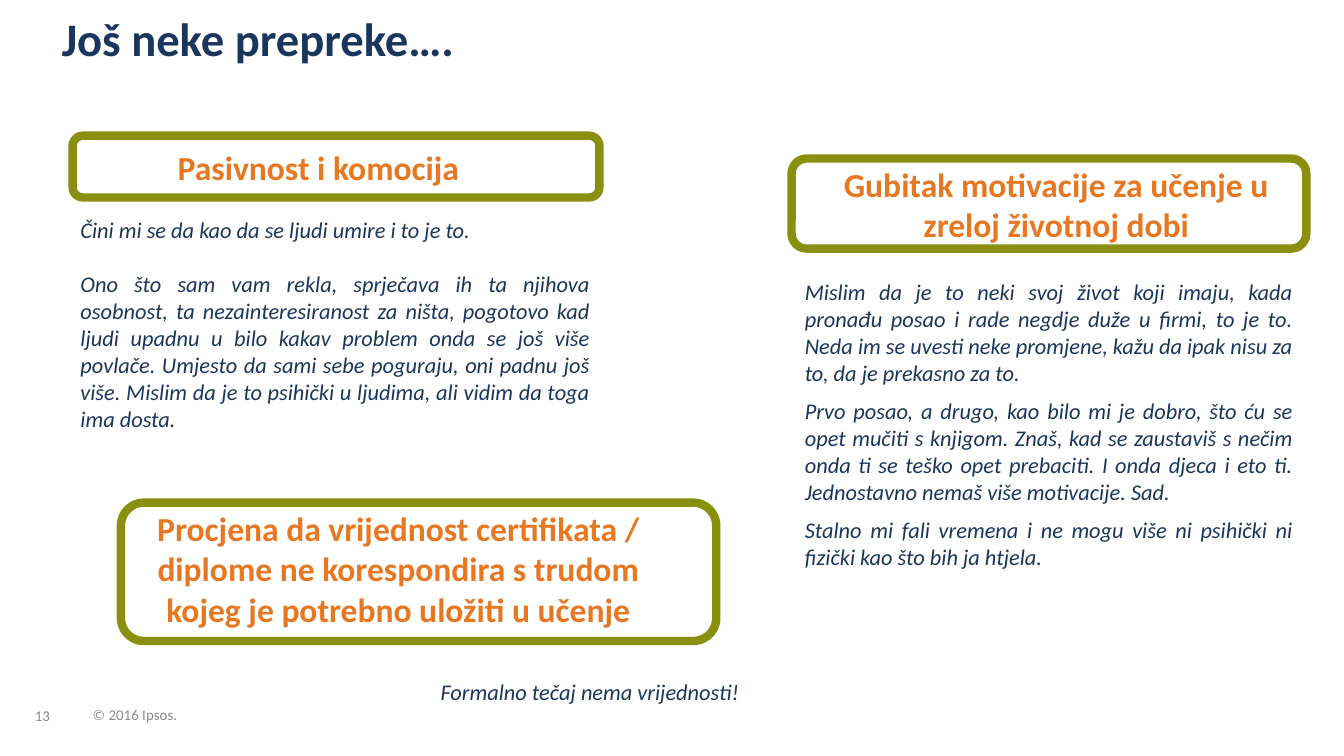
from pptx import Presentation
from pptx.dml.color import RGBColor
from pptx.enum.shapes import MSO_SHAPE
from pptx.enum.text import MSO_ANCHOR, MSO_AUTO_SIZE, PP_ALIGN
from pptx.util import Inches, Pt

NAVY, ORANGE, OLIVE, GREY = "1B365D", "E87722", "898F0E", "888B8D"


def color(value):
    return RGBColor.from_string(value)


def write(box, place, paragraphs, size, ink, align=PP_ALIGN.LEFT, inset=(0, 0),
          anchor=MSO_ANCHOR.TOP, wrap=True, gap=0, spacing=1.0, bold=False, italic=False):
    box.left, box.top, box.width, box.height = [Inches(value) for value in place]
    frame = box.text_frame
    side, edge = [Inches(value) for value in inset]
    frame_format = {"margin_left": side, "margin_right": side,
                    "margin_top": edge, "margin_bottom": edge,
                    "vertical_anchor": anchor, "word_wrap": wrap,
                    "auto_size": MSO_AUTO_SIZE.NONE}
    for name, value in frame_format.items():
        setattr(frame, name, value)
    for index, text in enumerate(paragraphs):
        para = frame.paragraphs[0] if index == 0 else frame.add_paragraph()
        para.alignment = align
        para.line_spacing = spacing
        para.space_before = Pt(gap if index else 0)
        span = para.add_run()
        span.text = text
        font_format = {"name": "Calibri", "size": Pt(size), "bold": bold, "italic": italic}
        for name, value in font_format.items():
            setattr(span.font, name, value)
        span.font.color.rgb = color(ink)


deck = Presentation()
deck.slide_width, deck.slide_height = Inches(10), Inches(10 * 9 / 16)
page = deck.slides.add_slide(deck.slide_layouts[5])

write(page.shapes.title, (0.46, 0.12, 6.76, 0.38), ["Još neke prepreke…."],
      25, NAVY, spacing=0.9, bold=True)

footers = [((0.26, 5.13, 0.34, 0.26), "13"), ((0.69, 5.2, 0.76, 0.18), "© 2016 Ipsos.")]
for place, text in footers:
    write(page.shapes.add_textbox(0, 0, 0, 0), place, [text], 8, GREY,
          anchor=MSO_ANCHOR.BOTTOM, wrap=False, spacing=0.85)

headings = [
    ((0.16, 1.09, 4.42, 0.3), (0.54, 1.01, 3.92, 0.46), (0, 0), "Pasivnost i komocija"),
    ((6.1, 1.22, 3.52, 0.61), (5.89, 1.18, 3.83, 0.67), (0, 0),
     "Gubitak motivacije za učenje u zreloj životnoj dobi"),
    ((0.86, 3.73, 4.21, 1.38), (0.9, 3.74, 4.43, 1.03), (0.1, 0.05),
     "Procjena da vrijednost certifikata / diplome ne korespondira s trudom "
     "kojeg je potrebno uložiti u učenje"),
]
for place, border_place, inset, text in headings:
    write(page.shapes.add_textbox(0, 0, 0, 0), place, [text], 18, ORANGE,
          align=PP_ALIGN.CENTER, inset=inset, bold=True)
    border = page.shapes.add_shape(MSO_SHAPE.ROUNDED_RECTANGLE,
                                   *[Inches(value) for value in border_place])
    border.shadow.inherit = False
    border.fill.background()
    border.line.color.rgb = color(OLIVE)
    border.line.width = Pt(4.5)

quotes = [
    ((0.5, 1.56, 3.99, 1.95), PP_ALIGN.JUSTIFY, True, 14.6, [
        "Čini mi se da kao da se ljudi umire i to je to.",
        "Ono što sam vam rekla, sprječava ih ta njihova osobnost, ta nezainteresiranost "
        "za ništa, pogotovo kad ljudi upadnu u bilo kakav problem onda se još više povlače. "
        "Umjesto da sami sebe poguraju, oni padnu još više. Mislim da je to psihički u "
        "ljudima, ali vidim da toga ima dosta."]),
    ((5.89, 2.02, 3.83, 2.29), PP_ALIGN.JUSTIFY, True, 6.1, [
        "Mislim da je to neki svoj život koji imaju, kada pronađu posao i rade negdje duže "
        "u firmi, to je to. Neda im se uvesti neke promjene, kažu da ipak nisu za to, da je "
        "prekasno za to.",
        "Prvo posao, a drugo, kao bilo mi je dobro, što ću se opet mučiti s knjigom. Znaš, "
        "kad se zaustaviš s nečim onda ti se teško opet prebaciti. I onda djeca i eto ti. "
        "Jednostavno nemaš više motivacije. Sad.",
        "Stalno mi fali vremena i ne mogu više ni psihički ni fizički kao što bih ja htjela."]),
    ((3.18, 5, 2.44, 0.3), PP_ALIGN.LEFT, False, 0, ["Formalno tečaj nema vrijednosti!"]),
]
for place, align, wrap, gap, paragraphs in quotes:
    write(page.shapes.add_textbox(0, 0, 0, 0), place, paragraphs, 12, NAVY,
          align=align, inset=(0.1, 0.05), wrap=wrap, gap=gap, italic=True)

deck.save("out.pptx")
